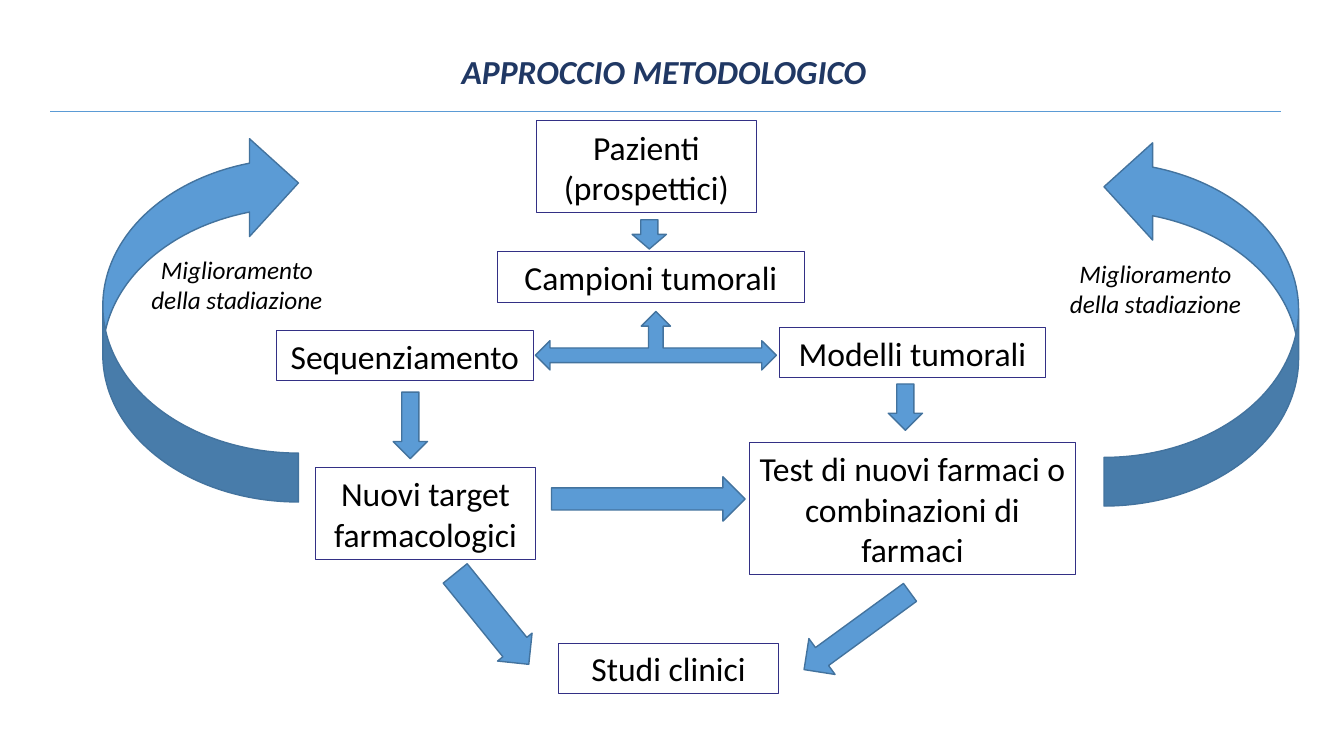
from lxml.etree import SubElement
from pptx import Presentation
from pptx.dml.color import RGBColor
from pptx.enum.shapes import MSO_CONNECTOR, MSO_SHAPE
from pptx.enum.text import MSO_ANCHOR, MSO_AUTO_SIZE, PP_ALIGN
from pptx.oxml.ns import qn
from pptx.util import Inches, Pt

BOXES = [
    ("Pazienti (prospettici)", 5.32, 1.2, 2.18, 0.91),
    ("Campioni tumorali", 4.93, 2.5, 3.05, 0.5),
    ("Sequenziamento", 2.74, 3.28, 2.55, 0.5),
    ("Modelli tumorali", 7.73, 3.25, 2.64, 0.5),
    ("Nuovi target farmacologici", 3.13, 4.64, 2.18, 0.91),
    ("Test di nuovi farmaci o combinazioni di farmaci", 7.43, 4.39, 3.24, 1.31),
    ("Studi clinici", 5.54, 6.38, 2.18, 0.5),
]
ARROWS = [
    (MSO_SHAPE.DOWN_ARROW, 6.27, 2.18, 0.34, 0.29, 0),
    (MSO_SHAPE.LEFT_RIGHT_UP_ARROW, 5.31, 3.09, 2.39, 0.58, 0),
    (MSO_SHAPE.DOWN_ARROW, 3.9, 3.89, 0.34, 0.66, 0),
    (MSO_SHAPE.DOWN_ARROW, 8.81, 3.81, 0.34, 0.46, 0),
    (MSO_SHAPE.RIGHT_ARROW, 5.47, 4.73, 1.92, 0.44, 0),
    (MSO_SHAPE.RIGHT_ARROW, 7.85, 6.04, 1.3, 0.44, 143.9),
]


def color(text):
    """Turn a hex string into a colour."""
    return RGBColor.from_string(text)


def write(shape, text, size, tint="000000", bold=False, italic=False):
    """Write one centred paragraph into a shape."""
    frame = shape.text_frame
    frame.word_wrap = True
    frame.auto_size = MSO_AUTO_SIZE.NONE
    frame.vertical_anchor = MSO_ANCHOR.MIDDLE
    frame.text = text
    para = frame.paragraphs[0]
    para.alignment = PP_ALIGN.CENTER
    font = para.font
    font.name, font.size = "Calibri", Pt(size)
    font.bold, font.italic = bold, italic
    font.color.rgb = color(tint)


def add_title(slide, text):
    """Place and format the slide title."""
    title = slide.shapes.title
    title.left, title.top = Inches(0.5), Inches(0.45)
    title.width, title.height = Inches(12.17), Inches(0.5)
    write(title, text, 24, "203864", bold=True, italic=True)


def add_rule(slide, left, right, top):
    """Draw the thin line below the title."""
    rule = slide.shapes.add_connector(
        MSO_CONNECTOR.STRAIGHT, Inches(left), Inches(top), Inches(right), Inches(top))
    rule.line.color.rgb = color("5B9BD5")
    rule.line.width = Pt(0.5)
    SubElement(rule._element.spPr, qn("a:effectLst"))


def add_figure(slide, kind, place, line, width):
    """Add an outlined preset shape without shadow."""
    shape = slide.shapes.add_shape(kind, *map(Inches, place))
    shape.shadow.inherit = False
    shape.line.color.rgb = color(line)
    shape.line.width = Pt(width)
    return shape


def add_box(slide, text, *place):
    """Add a framed step of the method."""
    box = add_figure(slide, MSO_SHAPE.RECTANGLE, place, "333085", 0.75)
    box.fill.background()
    write(box, text, 24)


def add_arrow(slide, kind, left, top, width, height, angle):
    """Add a blue block arrow."""
    arrow = add_figure(slide, kind, (left, top, width, height), "43739E", 1)
    arrow.fill.solid()
    arrow.fill.fore_color.rgb = color("5B9BD5")
    arrow.rotation = angle
    return arrow


def add_note(slide, text, *place):
    """Add an italic side note."""
    write(slide.shapes.add_textbox(*map(Inches, place)), text, 18, italic=True)


def main():
    """Build and save the slide."""
    deck = Presentation()
    deck.slide_width, deck.slide_height = Inches(13.33), Inches(7.5)
    slide = deck.slides.add_slide(deck.slide_layouts[5])
    add_title(slide, "APPROCCIO METODOLOGICO")
    add_rule(slide, 0.5, 12.71, 1.1)
    for box in BOXES:
        add_box(slide, *box)
    for arrow in ARROWS:
        add_arrow(slide, *arrow)
    slant = add_arrow(slide, MSO_SHAPE.RIGHT_ARROW, 4.3, 5.92, 1.16, 0.44, 51)
    slant.adjustments[0] = 0.695
    curve = MSO_SHAPE.CURVED_LEFT_ARROW
    add_arrow(slide, curve, 1.02, 1.33, 1.94, 3.65, 180)
    loop = add_arrow(slide, curve, 10.95, 1.37, 1.93, 3.65, 180)
    loop._element.spPr.xfrm.set("flipH", "1")
    for left, top in ((1.26, 2.47), (10.37, 2.51)):
        add_note(slide, "Miglioramento della stadiazione", left, top, 2.18, 0.71)
    deck.save("out.pptx")


if __name__ == "__main__":
    main()
